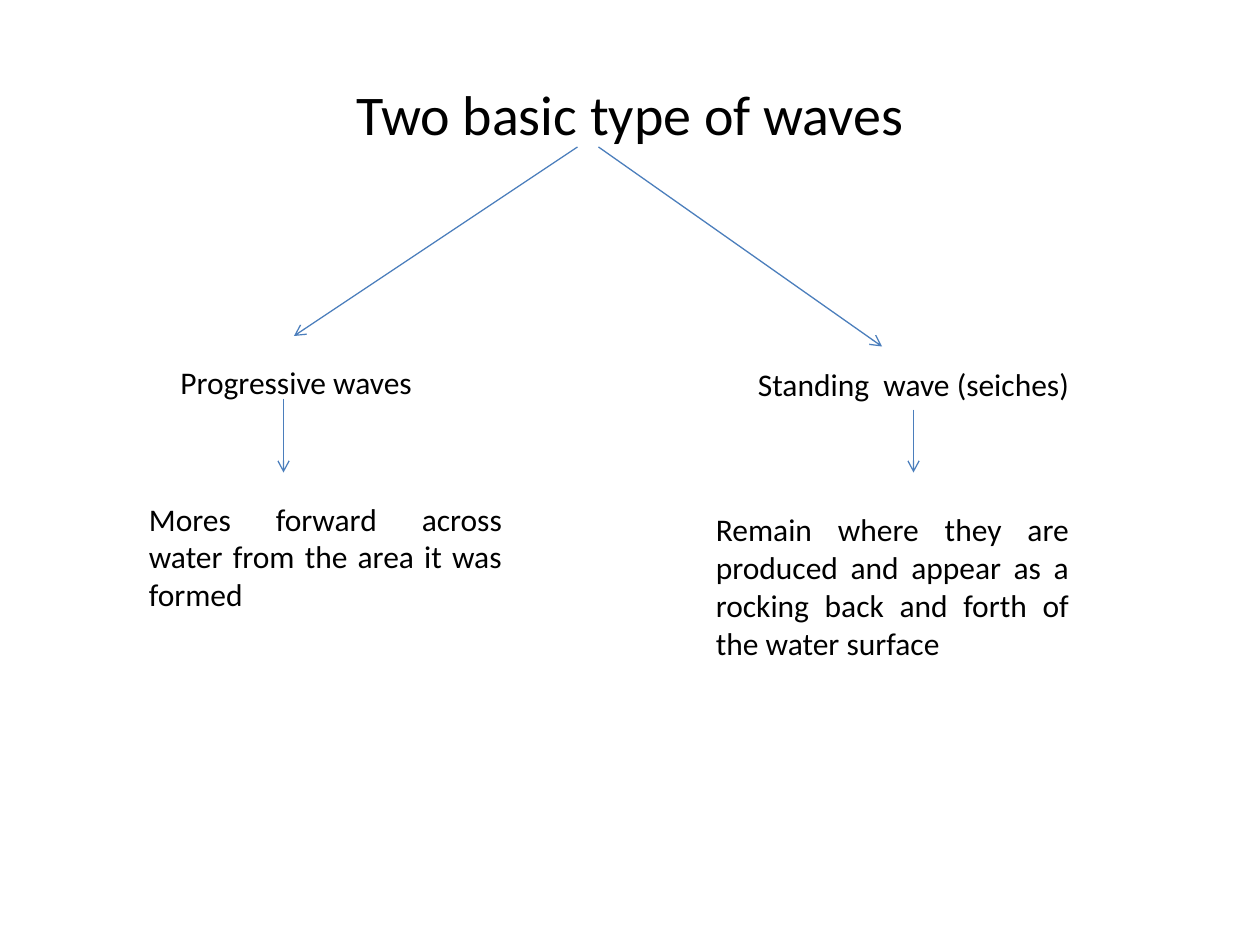
from dataclasses import dataclass

from lxml.etree import SubElement
from pptx import Presentation
from pptx.dml.color import RGBColor
from pptx.enum.shapes import MSO_CONNECTOR as Link
from pptx.enum.text import PP_ALIGN as Align
from pptx.oxml.ns import qn
from pptx.slide import Slide
from pptx.util import Pt

BLACK = RGBColor(0x00, 0x00, 0x00)
BLUE = RGBColor(0x4B, 0x7E, 0xBC)
FONT = "Calibri"


@dataclass
class Label:
    text: str
    left: float
    top: float
    width: float
    height: float
    align: Align = Align.LEFT


@dataclass
class Arrow:
    x1: float
    y1: float
    x2: float
    y2: float


LABELS = [
    Label("Progressive waves", 96, 204, 216, 29),
    Label("Standing  wave (seiches)", 426, 205, 246, 29),
    Label("Mores forward across water from the area it was formed",
          78, 282, 216, 73, Align.JUSTIFY),
    Label("Remain where they are produced and appear as a rocking "
          "back and forth of the water surface",
          402, 288, 216, 94, Align.JUSTIFY),
]
ARROWS = [
    Arrow(330, 84, 168, 192),
    Arrow(342, 84, 504, 198),
    Arrow(162, 228, 162, 270),
    Arrow(522, 234, 522, 270),
]


def add_text(slide: Slide, label: Label, *, size: float = 18,
             color: RGBColor = BLACK) -> None:
    box = slide.shapes.add_textbox(Pt(label.left), Pt(label.top),
                                   Pt(label.width), Pt(label.height))
    frame = box.text_frame
    frame.word_wrap = True
    para = frame.paragraphs[0]
    para.alignment = label.align
    run = para.add_run()
    run.text = label.text
    run.font.name = FONT
    run.font.size = Pt(size)
    run.font.color.rgb = color


def add_arrow(slide: Slide, arrow: Arrow) -> None:
    link = slide.shapes.add_connector(Link.STRAIGHT, Pt(arrow.x1), Pt(arrow.y1),
                                      Pt(arrow.x2), Pt(arrow.y2))
    link.line.color.rgb = BLUE
    link.line.width = Pt(0.75)
    props = link.line._get_or_add_ln()
    SubElement(props, qn("a:tailEnd"), type="arrow")
    SubElement(link._element.spPr, qn("a:effectLst"))


def main() -> None:
    deck = Presentation()
    deck.slide_width, deck.slide_height = Pt(720), Pt(540)
    slide = deck.slides.add_slide(deck.slide_layouts[6])
    title = Label("Two basic type of waves", 36, 42, 648, 441, Align.CENTER)
    add_text(slide, title, size=32)
    for arrow in ARROWS:
        add_arrow(slide, arrow)
    for label in LABELS:
        add_text(slide, label)
    deck.save("out.pptx")


if __name__ == "__main__":
    main()
